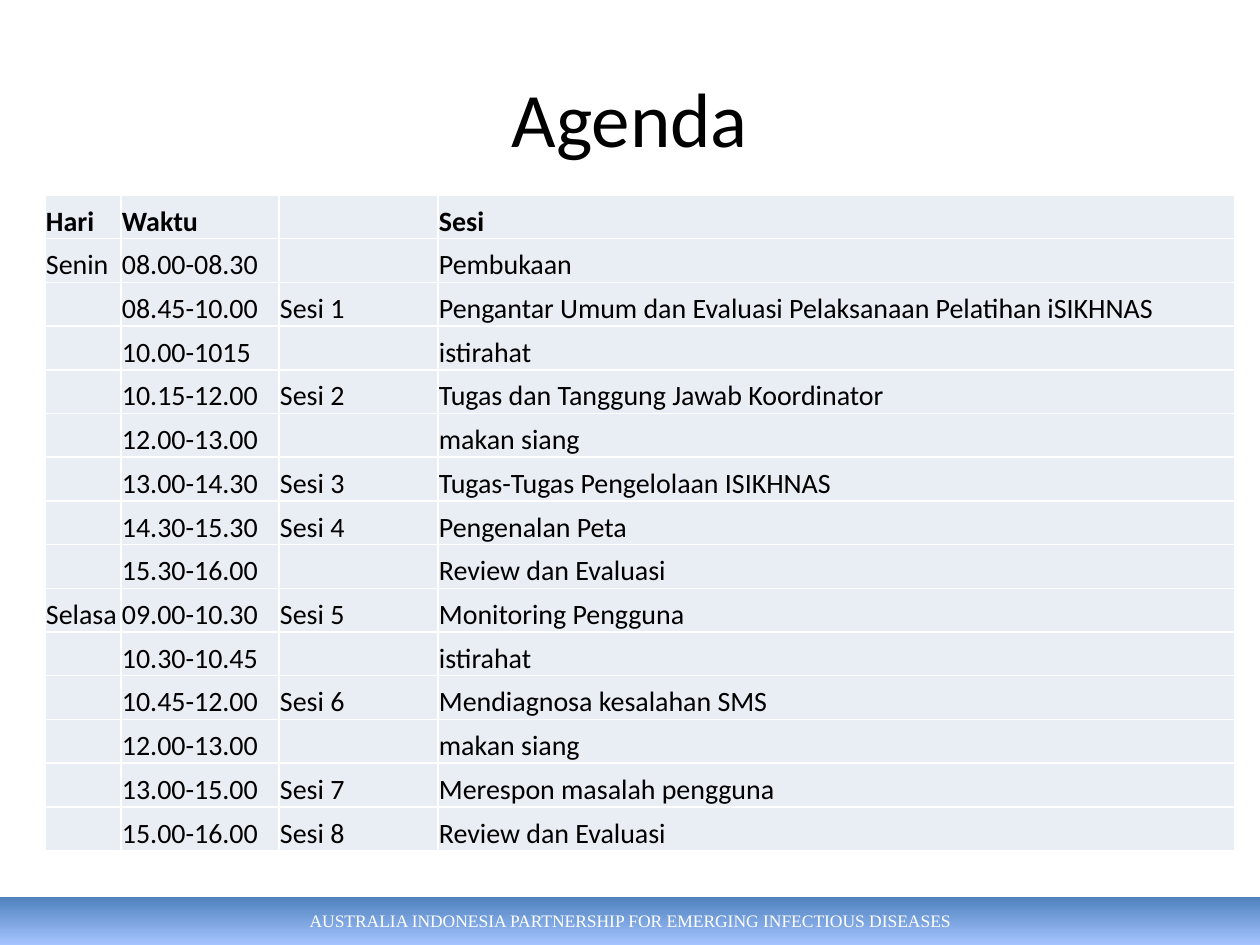
from lxml import etree
from pptx import Presentation
from pptx import util as u
from pptx.dml.color import RGBColor
from pptx.enum import shapes, text
from pptx.oxml.ns import qn

TITLE = "Agenda"
FOOTER = "AUSTRALIA INDONESIA PARTNERSHIP FOR EMERGING INFECTIOUS DISEASES"
ROWS = [
    ("Hari", "Waktu", "", "Sesi"),
    ("Senin", "08.00-08.30", "", "Pembukaan"),
    ("", "08.45-10.00", "Sesi 1", "Pengantar Umum dan Evaluasi Pelaksanaan Pelatihan iSIKHNAS"),
    ("", "10.00-1015", "", "istirahat"),
    ("", "10.15-12.00", "Sesi 2", "Tugas dan Tanggung Jawab Koordinator"),
    ("", "12.00-13.00", "", "makan siang"),
    ("", "13.00-14.30", "Sesi 3", "Tugas-Tugas Pengelolaan ISIKHNAS"),
    ("", "14.30-15.30", "Sesi 4", "Pengenalan Peta"),
    ("", "15.30-16.00", "", "Review dan Evaluasi"),
    ("Selasa", "09.00-10.30", "Sesi 5", "Monitoring Pengguna"),
    ("", "10.30-10.45", "", "istirahat"),
    ("", "10.45-12.00", "Sesi 6", "Mendiagnosa kesalahan SMS"),
    ("", "12.00-13.00", "", "makan siang"),
    ("", "13.00-15.00", "Sesi 7", "Merespon masalah pengguna"),
    ("", "15.00-16.00", "Sesi 8", "Review dan Evaluasi"),
]
COLS = [76, 158, 159, 797]
HIGH = 656


def px(n):
    return round(n * 914400 / 126)


def rgb(code):
    return RGBColor.from_string(code)


def style(para, size, face, color, bold=False):
    for run in para.runs:
        font = run.font
        font.size, font.name, font.bold = u.Pt(size), face, bold
        font.color.rgb = rgb(color)


def border(cell, color, width):
    props = cell._tc.get_or_add_tcPr()
    for side in ("a:lnL", "a:lnR", "a:lnT", "a:lnB"):
        line = etree.SubElement(props, qn(side), w=str(u.Pt(width)))
        fill = etree.SubElement(line, qn("a:solidFill"))
        etree.SubElement(fill, qn("a:srgbClr"), val=color)


deck = Presentation()
deck.slide_width, deck.slide_height = px(1260), px(945)
slide = deck.slides.add_slide(deck.slide_layouts[5])

# Title
title = slide.shapes.title
title.left, title.top, title.width, title.height = map(px, (63, 38, 1134, 157))
frame = title.text_frame
frame.text = TITLE
frame.vertical_anchor = text.MSO_ANCHOR.MIDDLE
frame.paragraphs[0].alignment = text.PP_ALIGN.CENTER
style(frame.paragraphs[0], 44, "Calibri", "000000")

# Footer band
band = slide.shapes.add_shape(
    shapes.MSO_SHAPE.RECTANGLE, *map(px, (0, 897, 1260, 48)))
band.shadow.inherit = False
band.line.fill.background()
band.fill.gradient()
band.fill.gradient_angle = 270
for stop, place, color in zip(band.fill.gradient_stops, (0, 1), ("4F81BD", "A4C4FF")):
    stop.position = place
    stop.color.rgb = rgb(color)
frame = band.text_frame
frame.text = FOOTER
frame.vertical_anchor = text.MSO_ANCHOR.MIDDLE
frame.paragraphs[0].alignment = text.PP_ALIGN.CENTER
style(frame.paragraphs[0], 10, "Times New Roman", "FFFFFF")

# Agenda table
table = slide.shapes.add_table(
    len(ROWS), len(COLS), px(45), px(195), px(sum(COLS)), px(HIGH)).table
for col, width in zip(table.columns, COLS):
    col.width = px(width)
for r, row in enumerate(ROWS):
    table.rows[r].height = px(HIGH / len(ROWS))
    for c, words in enumerate(row):
        cell = table.cell(r, c)
        cell.margin_left = cell.margin_right = cell.margin_top = px(1)
        cell.margin_bottom = 0
        cell.vertical_anchor = text.MSO_ANCHOR.BOTTOM
        border(cell, "FFFFFF", 1)
        cell.fill.solid()
        cell.fill.fore_color.rgb = rgb("E9EDF4")
        if words:
            cell.text_frame.text = words
            style(cell.text_frame.paragraphs[0], 16, "Calibri", "000000", r == 0)

deck.save("out.pptx")
